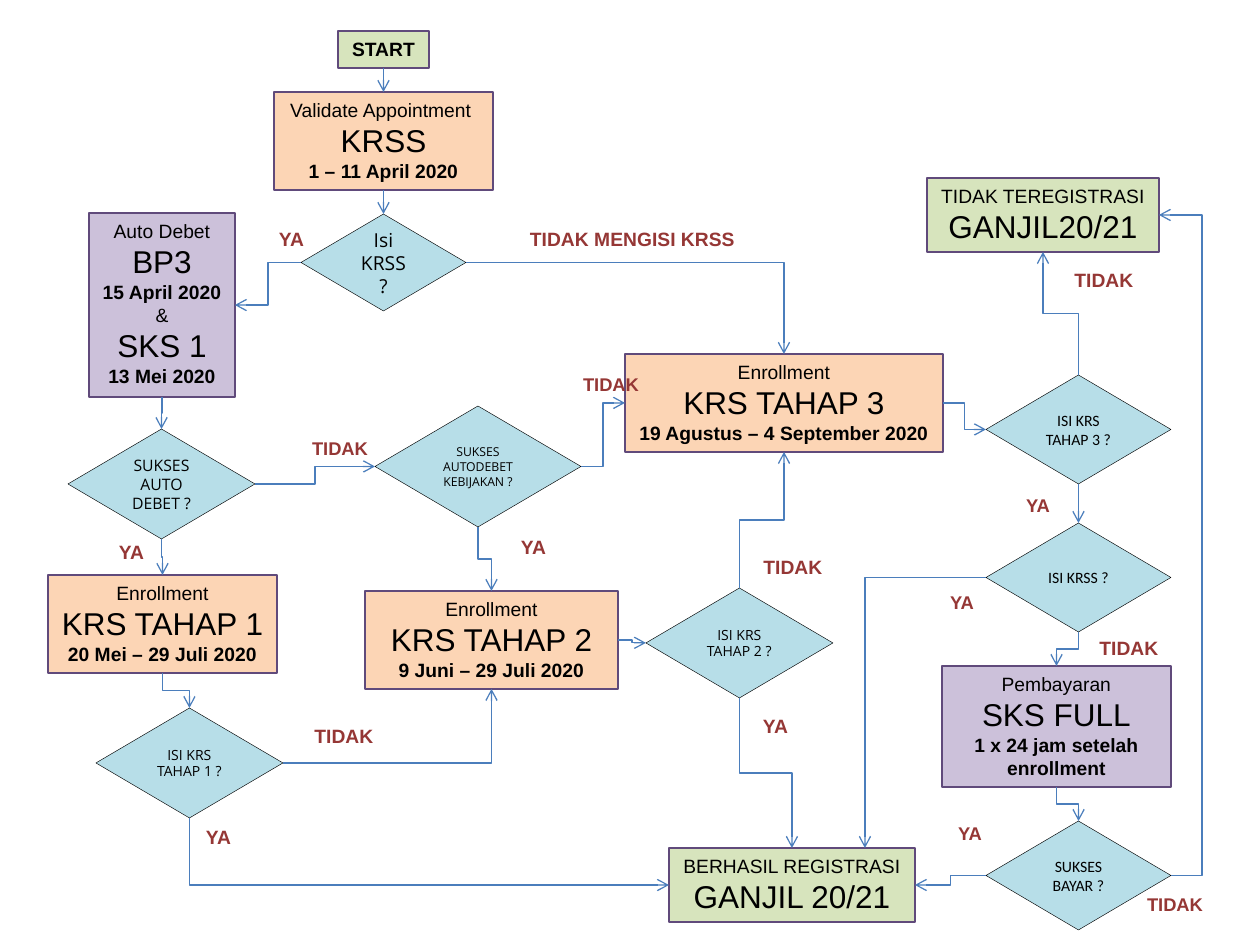
from pptx import Presentation
from pptx.dml.color import RGBColor
from pptx.enum.shapes import MSO_CONNECTOR, MSO_SHAPE
from pptx.enum.text import MSO_ANCHOR, MSO_AUTO_SIZE, PP_ALIGN
from pptx.oxml.ns import qn
from pptx.util import Emu, Pt
from lxml.etree import SubElement

PX = 914400 // 126
COLORS = {
    "orange": "FCD5B5", "purple": "CCC1DA", "green": "D7E4BD", "blue": "B7DEE8",
    "border": "604A7B", "ink": "000000", "label": "953735", "arrow": "4B7EBC",
}
STYLES = {"plain": (11, False), "big": (18, False), "bold": (11, True)}

# Process boxes: name, place in px, fill, wrap, lines of (text, style)
BOXES = [
    ("start", (338, 31, 91, 37), "green", False, [("START", "bold")]),
    ("validate", (274, 92, 219, 98), "orange", False,
     [("Validate Appointment ", "plain"), ("KRSS", "big"), ("1 – 11 April 2020", "bold")]),
    ("auto debet", (89, 213, 146, 184), "purple", False,
     [("Auto Debet", "plain"), ("BP3", "big"), ("15 April 2020", "bold"),
      ("&", "plain"), ("SKS 1", "big"), ("13 Mei 2020", "bold")]),
    ("tahap 1", (48, 575, 229, 98), "orange", False,
     [("Enrollment", "plain"), ("KRS TAHAP 1", "big"), ("20 Mei – 29 Juli 2020", "bold")]),
    ("tahap 2", (365, 591, 253, 98), "orange", True,
     [("Enrollment", "plain"), ("KRS TAHAP 2", "big"), ("9 Juni – 29 Juli 2020", "bold")]),
    ("tahap 3", (625, 354, 318, 98), "orange", False,
     [("Enrollment", "plain"), ("KRS TAHAP 3", "big"),
      ("19 Agustus – 4 September 2020", "bold")]),
    ("payment", (942, 666, 229, 121), "purple", True,
     [("Pembayaran", "plain"), ("SKS FULL", "big"), ("1 x 24 jam setelah enrollment", "bold")]),
    ("registered", (669, 848, 246, 74), "green", False,
     [("BERHASIL REGISTRASI", "plain"), ("GANJIL 20/21", "big")]),
    ("unregistered", (927, 178, 232, 74), "green", False,
     [("TIDAK TEREGISTRASI", "plain"), ("GANJIL20/21", "big")]),
]

# Decisions: name, place in px, text, font, size
DECISIONS = [
    ("krss?", (301, 214, 165, 97), "Isi KRSS ?", "Open Sans", 11),
    ("debet?", (68, 429, 187, 110), "SUKSES AUTO DEBET ?", "Open Sans", 9),
    ("tahap 1?", (96, 708, 187, 110), "ISI KRS TAHAP 1 ?", "Open Sans", 8),
    ("tahap 2?", (646, 588, 187, 110), "ISI KRS TAHAP 2 ?", "Open Sans", 8),
    ("policy?", (375, 406, 206, 121), "SUKSES AUTODEBET KEBIJAKAN ?", "Open Sans", 7),
    ("tahap 3?", (986, 375, 185, 109), "ISI KRS TAHAP 3 ?", "Calibri", 9),
    ("krss again?", (986, 523, 185, 109), "ISI KRSS ?", "Calibri", 9),
    ("paid?", (986, 821, 185, 109), "SUKSES BAYAR ?", "Calibri", 9),
]

# Links: from node, side, to node, side, then optional settings
LINKS = [
    ("start", "bottom", "validate", "top", {}),
    ("validate", "bottom", "krss?", "top", {}),
    ("krss?", "left", "auto debet", "right", {}),
    ("krss?", "right", "tahap 3", "top", {}),
    ("auto debet", "bottom", "debet?", "top", {}),
    ("debet?", "bottom", "tahap 1", "top", {}),
    ("debet?", "right", "policy?", "left", {}),
    ("policy?", "right", "tahap 3", "left", {}),
    ("policy?", "bottom", "tahap 2", "top", {}),
    ("tahap 1", "bottom", "tahap 1?", "top", {}),
    ("tahap 1?", "right", "tahap 2", "bottom", {}),
    ("tahap 1?", "bottom", "registered", "left", {}),
    ("tahap 2", "right", "tahap 2?", "left", {}),
    ("tahap 2?", "top", "tahap 3", "bottom", {}),
    ("tahap 2?", "bottom", "registered", "top", {}),
    ("tahap 3", "right", "tahap 3?", "left", {}),
    ("tahap 3?", "top", "unregistered", "bottom", {}),
    ("tahap 3?", "bottom", "krss again?", "top", {}),
    ("krss again?", "left", "registered", "top", {"shift": 73}),
    ("krss again?", "bottom", "payment", "top", {}),
    ("payment", "bottom", "paid?", "top", {}),
    ("paid?", "left", "registered", "right", {}),
    ("paid?", "right", "unregistered", "right", {"turn": 1202}),
]

# Answers: text, left, top, width in px, size
LABELS = [
    ("YA", 265, 221, 53, 11), ("TIDAK MENGISI KRSS", 507, 221, 251, 11),
    ("TIDAK", 1053, 262, 102, 11), ("TIDAK", 299, 431, 82, 10.5),
    ("TIDAK", 570, 367, 82, 10.5), ("YA", 105, 534, 53, 11),
    ("YA", 507, 529, 53, 11), ("TIDAK", 750, 549, 86, 11),
    ("YA", 1012, 488, 52, 10.5), ("YA", 936, 585, 52, 10.5),
    ("TIDAK", 1086, 630, 86, 11), ("TIDAK", 301, 718, 86, 11),
    ("YA", 749, 708, 53, 11), ("YA", 192, 819, 53, 11),
    ("YA", 944, 816, 52, 10.5), ("TIDAK", 1134, 887, 82, 10.5),
]


def px(*lengths):
    return [Emu(round(length * PX)) for length in lengths]


def color(name):
    return RGBColor.from_string(COLORS[name])


def format_line(para, font, size, bold, ink):
    para.alignment = PP_ALIGN.CENTER
    for span in para.runs:
        span.font.name, span.font.size, span.font.bold = font, Pt(size), bold
        span.font.color.rgb = color(ink)


def add_node(slide, kind, place, fill, border, width):
    node = slide.shapes.add_shape(kind, *px(*place))
    node.shadow.inherit = False
    node.fill.solid()
    node.fill.fore_color.rgb = color(fill)
    node.line.color.rgb = color(border)
    node.line.width = Pt(width)
    return node.text_frame


def add_box(slide, place, fill, wrap, lines):
    frame = add_node(slide, MSO_SHAPE.RECTANGLE, place, fill, "border", 0.75)
    frame.word_wrap = wrap
    frame.auto_size = MSO_AUTO_SIZE.SHAPE_TO_FIT_TEXT
    frame.vertical_anchor = MSO_ANCHOR.TOP
    frame.text = "\n".join(text for text, _ in lines)
    for para, (_, style) in zip(frame.paragraphs, lines):
        format_line(para, "Arial", *STYLES[style], "ink")


def add_decision(slide, place, text, font, size):
    frame = add_node(slide, MSO_SHAPE.FLOWCHART_DECISION, place, "blue", "ink", 0.25)
    frame.text = text
    format_line(frame.paragraphs[0], font, size, False, "ink")


def add_label(slide, text, left, top, width, size):
    frame = slide.shapes.add_textbox(*px(left, top, width, 36)).text_frame
    frame.word_wrap = False
    frame.auto_size = MSO_AUTO_SIZE.SHAPE_TO_FIT_TEXT
    frame.text = text
    format_line(frame.paragraphs[0], "Arial", size, True, "label")


def port(place, side, shift=0):
    left, top, width, height = place
    middle_x, middle_y = left + width / 2 + shift, top + height / 2
    return {"left": (left, middle_y), "right": (left + width, middle_y),
            "top": (middle_x, top), "bottom": (middle_x, top + height)}[side]


def turn_upright(line, start, end):
    """Rotate an elbow so that it leaves its start vertically."""
    run, rise = end[0] - start[0], end[1] - start[1]
    width, height = abs(rise), abs(run)
    line.left, line.top, line.width, line.height = px(
        (start[0] + end[0] - width) / 2, (start[1] + end[1] - height) / 2, width, height)
    rotation, flip_h, flip_v = {
        (True, False): (90, 0, 0), (True, True): (270, 1, 0),
        (False, True): (90, 1, 1), (False, False): (270, 0, 1),
    }[rise > 0, run > 0]
    frame = line._element.spPr.find(qn("a:xfrm"))
    frame.set("rot", str(rotation * 60000))
    frame.set("flipH", str(flip_h))
    frame.set("flipV", str(flip_v))


def add_link(slide, start, end, upright, corner, turn=None):
    straight = start[0] == end[0]
    kind = MSO_CONNECTOR.STRAIGHT if straight else MSO_CONNECTOR.ELBOW
    line = slide.shapes.add_connector(kind, *px(*start, *end))
    line.line.color.rgb = color("arrow")
    line.line.width = Pt(0.75)
    if upright and not straight:
        turn_upright(line, start, end)
    properties = line._element.spPr
    geometry = properties.find(qn("a:prstGeom"))
    if corner:
        geometry.set("prst", "bentConnector2")
    if turn is not None:
        share = round((turn - start[0]) / (end[0] - start[0]) * 100000)
        SubElement(geometry.find(qn("a:avLst")), qn("a:gd"), name="adj1", fmla=f"val {share}")
    SubElement(line.line._get_or_add_ln(), qn("a:tailEnd"), type="arrow")
    SubElement(properties, qn("a:effectLst"))


def main():
    deck = Presentation()
    deck.slide_width, deck.slide_height = px(1260, 945)
    slide = deck.slides.add_slide(deck.slide_layouts[6])
    places = {name: place for name, place, *_ in BOXES + DECISIONS}

    # Steps and questions
    for _, *box in BOXES:
        add_box(slide, *box)
    for _, *decision in DECISIONS:
        add_decision(slide, *decision)

    # Arrows: one corner when the two sides lie on different axes
    for source, exit_side, target, entry_side, extra in LINKS:
        upright = exit_side in ("top", "bottom")
        corner = upright != (entry_side in ("top", "bottom"))
        end = port(places[target], entry_side, extra.get("shift", 0))
        add_link(slide, port(places[source], exit_side), end, upright, corner, extra.get("turn"))

    # Answers
    for label in LABELS:
        add_label(slide, *label)
    deck.save("out.pptx")


if __name__ == "__main__":
    main()
